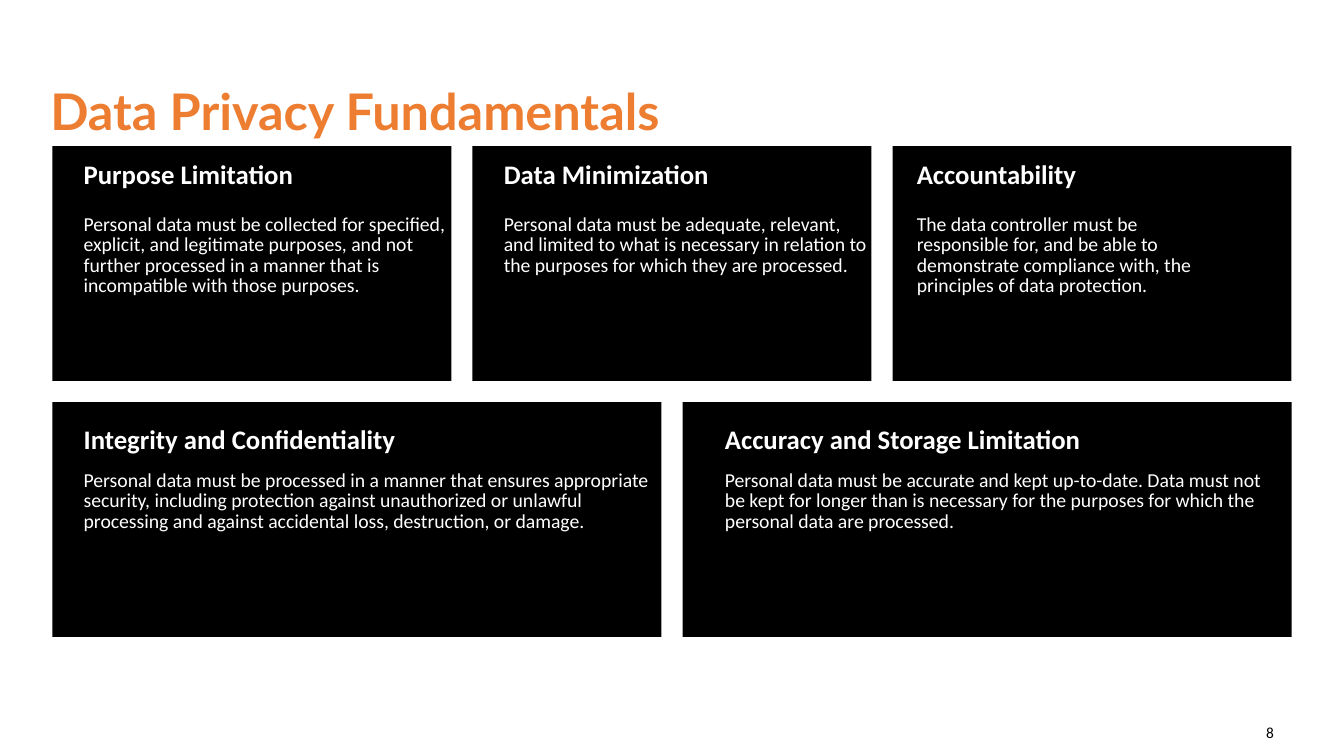
from dataclasses import dataclass

import pptx
import pptx.dml.color
import pptx.enum.shapes
import pptx.util

Inches = pptx.util.Inches
Pt = pptx.util.Pt
RGBColor = pptx.dml.color.RGBColor


@dataclass(frozen=True)
class Theme:
    accent: RGBColor = RGBColor(0xED, 0x7D, 0x31)
    card: RGBColor = RGBColor(0, 0, 0)
    on_card: RGBColor = RGBColor(255, 255, 255)
    ink: RGBColor = RGBColor(0, 0, 0)
    title_font: str = "Lato"
    body_font: str = "Calibri"
    title_size: float = 36
    heading_size: float = 19.1
    body_size: float = 14.1
    number_size: float = 11
    heading_leading: float = 19.9
    body_leading: float = 14.6


@dataclass(frozen=True)
class Principle:
    heading: str
    body: str
    indent: float = 0.31
    right_margin: float = 0.01


THEME = Theme()
GRID_LEFT, GRID_TOP, GRID_WIDTH = 0.52, 1.45, 12.29
CARD_HEIGHT, GAP = 2.33, 0.21
BODY_OFFSET = 0.68

ROWS = [
    (0.16, [
        Principle("Purpose Limitation",
                  "Personal data must be collected for specified, explicit, and legitimate purposes, "
                  "and not further processed in a manner that is incompatible with those purposes."),
        Principle("Data Minimization",
                  "Personal data must be adequate, relevant, and limited to what is necessary "
                  "in relation to the purposes for which they are processed."),
        Principle("Accountability",
                  "The data controller must be responsible for, and be able to demonstrate "
                  "compliance with, the principles of data protection.",
                  indent=0.24, right_margin=0.6),
    ]),
    (0.25, [
        Principle("Integrity and Confidentiality",
                  "Personal data must be processed in a manner that ensures appropriate security, "
                  "including protection against unauthorized or unlawful processing and against "
                  "accidental loss, destruction, or damage."),
        Principle("Accuracy and Storage Limitation",
                  "Personal data must be accurate and kept up-to-date. Data must not be kept for "
                  "longer than is necessary for the purposes for which the personal data are processed.",
                  indent=0.42, right_margin=0.14),
    ]),
]


def add_text(slide, box, text, size, color, font=THEME.body_font, bold=False,
             line_spacing=None, inset=True):
    frame = slide.shapes.add_textbox(*map(Inches, box)).text_frame
    frame.word_wrap = True
    if not inset:
        frame.margin_left = frame.margin_right = 0
        frame.margin_top = frame.margin_bottom = 0
    paragraph = frame.paragraphs[0]
    paragraph.text = text
    paragraph.line_spacing = line_spacing
    paragraph.font.name = font
    paragraph.font.size = Pt(size)
    paragraph.font.bold = bold
    paragraph.font.color.rgb = color


def add_card(slide, box, principle, heading_offset):
    left, top, width, height = box
    card = slide.shapes.add_shape(
        pptx.enum.shapes.MSO_SHAPE.RECTANGLE, *map(Inches, box))
    card.shadow.inherit = False
    card.fill.solid()
    card.fill.fore_color.rgb = THEME.card
    card.line.fill.background()

    text_left = left + principle.indent
    text_width = width - principle.indent
    add_text(slide, (text_left, top + heading_offset, text_width, 0.28),
             principle.heading, THEME.heading_size, THEME.on_card, bold=True,
             line_spacing=Pt(THEME.heading_leading), inset=False)
    add_text(slide, (text_left, top + BODY_OFFSET, text_width - principle.right_margin, 0.81),
             principle.body, THEME.body_size, THEME.on_card,
             line_spacing=Pt(THEME.body_leading), inset=False)


def add_card_row(slide, box, principles, heading_offset):
    left, top, width, height = box
    card_width = (width - GAP * (len(principles) - 1)) / len(principles)
    for column, principle in enumerate(principles):
        card_left = left + column * (card_width + GAP)
        add_card(slide, (card_left, top, card_width, height), principle, heading_offset)


def add_title(slide, box):
    add_text(slide, box, "Data Privacy Fundamentals", THEME.title_size, THEME.accent,
             font=THEME.title_font, bold=True, line_spacing=1.1)


def add_page_number(slide, box):
    add_text(slide, box, "8", THEME.number_size, THEME.ink)


def main():
    presentation = pptx.Presentation()
    presentation.slide_width = Inches(13.33)
    presentation.slide_height = Inches(7.5)
    slide = presentation.slides.add_slide(presentation.slide_layouts[6])
    for row, (heading_offset, principles) in enumerate(ROWS):
        row_top = GRID_TOP + row * (CARD_HEIGHT + GAP)
        add_card_row(slide, (GRID_LEFT, row_top, GRID_WIDTH, CARD_HEIGHT),
                     principles, heading_offset)
    add_title(slide, (0.4, 0.69, 11.15, 1.3))
    add_page_number(slide, (12.46, 7.12, 0.87, 0.33))
    presentation.save("out.pptx")


if __name__ == "__main__":
    main()
